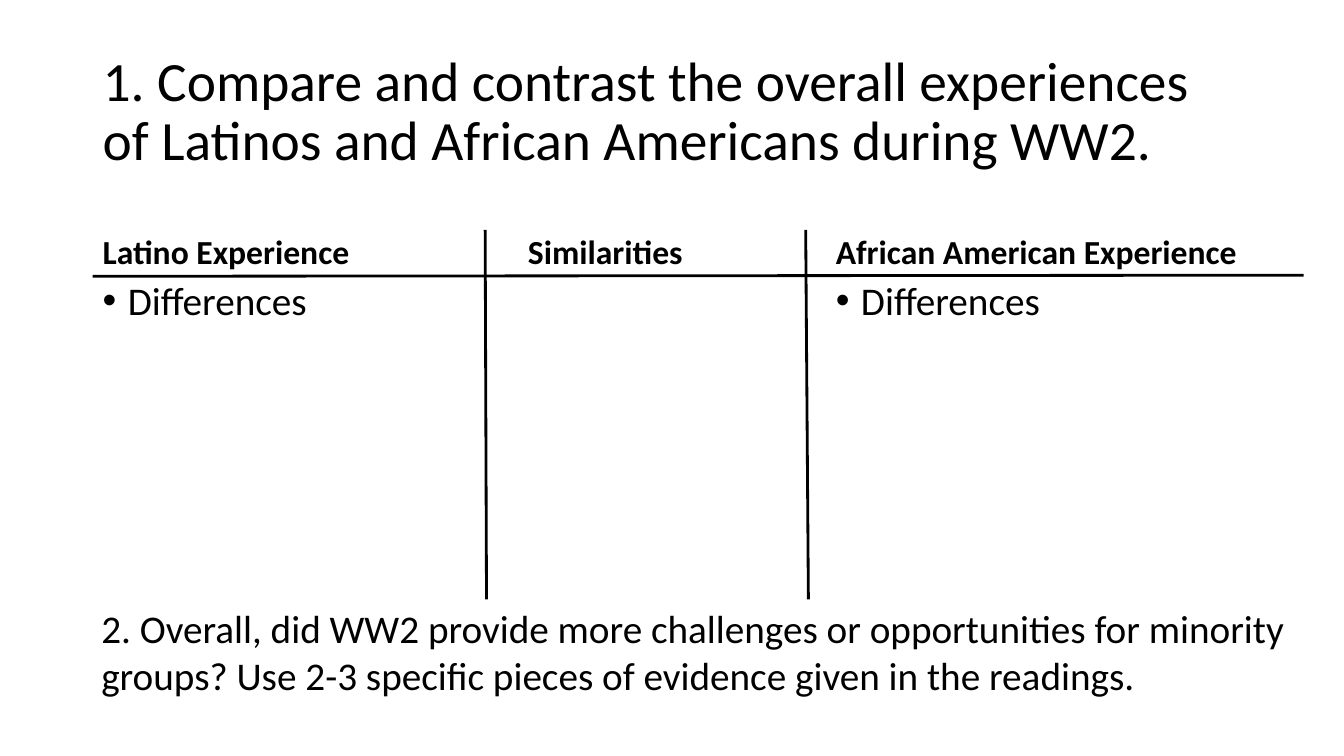
import dataclasses

import lxml.etree
import pptx
import pptx.dml.color
import pptx.enum.shapes
import pptx.enum.text
import pptx.oxml.ns
import pptx.slide
import pptx.util

WIDE, HIGH = 13.33, 7.5
FONT = "Calibri"
INK = {"text": "000000", "rule": "000000", "back": "FFFFFF"}
ANCHOR = pptx.enum.text.MSO_ANCHOR


@dataclasses.dataclass
class Box:
    """Text box, with its place in percent of the slide."""
    text: str
    left: float
    top: float
    width: float
    height: float
    size: float
    anchor: ANCHOR = ANCHOR.TOP
    bold: bool = False
    bullet: bool = False
    space: float = 0.9
    before: float = 0
    grow: bool = False


@dataclasses.dataclass
class Rule:
    """Straight line, with its ends in percent of the slide."""
    x1: float
    y1: float
    x2: float
    y2: float


def across(share: float) -> int:
    return pptx.util.Inches(WIDE * share / 100)


def down(share: float) -> int:
    return pptx.util.Inches(HIGH * share / 100)


def color(name: str) -> pptx.dml.color.RGBColor:
    return pptx.dml.color.RGBColor.from_string(INK[name])


def add_box(slide: pptx.slide.Slide, box: Box) -> None:
    shape = slide.shapes.add_textbox(across(box.left), down(box.top),
                                     across(box.width), down(box.height))
    frame = shape.text_frame
    frame.word_wrap = True
    frame.vertical_anchor = box.anchor
    if box.grow:
        frame.auto_size = pptx.enum.text.MSO_AUTO_SIZE.SHAPE_TO_FIT_TEXT
    frame.text = box.text
    para = frame.paragraphs[0]
    para.line_spacing = box.space
    para.space_before = pptx.util.Pt(box.before)
    font = para.runs[0].font
    font.name = FONT
    font.size = pptx.util.Pt(box.size)
    font.bold = box.bold
    font.color.rgb = color("text")
    if box.bullet:
        props = para._p.get_or_add_pPr()
        indent = pptx.util.Inches(0.25)
        props.set("marL", str(indent))
        props.set("indent", str(-indent))
        qn = pptx.oxml.ns.qn
        lxml.etree.SubElement(props, qn("a:buFont")).set("typeface", "Arial")
        lxml.etree.SubElement(props, qn("a:buChar")).set("char", "•")


def add_rule(slide: pptx.slide.Slide, rule: Rule) -> None:
    line = slide.shapes.add_connector(
        pptx.enum.shapes.MSO_CONNECTOR.STRAIGHT,
        across(rule.x1), down(rule.y1), across(rule.x2), down(rule.y2))
    line.line.color.rgb = color("rule")
    line.line.width = pptx.util.Pt(2)
    props = line._element.spPr
    lxml.etree.SubElement(props, pptx.oxml.ns.qn("a:effectLst"))


# Shared grid of the chart, in percent
EDGE, MID, LAST = 6.9, 38.55, 61.45
HEAD, BODY, FOOT = 24.55, 36.55, 79.3
BROAD, SLIM = 42.3, 31.75


def header(text: str, left: float, width: float) -> Box:
    return Box(text, left, HEAD, width, BODY - HEAD, 24,
               ANCHOR.BOTTOM, bold=True, before=10)


def point(text: str, left: float, width: float) -> Box:
    return Box(text, left, BODY, width, 53.7, 28, bullet=True, before=10)


BOXES = [
    Box("1. Compare and contrast the overall experiences of Latinos and "
        "African Americans during WW2.",
        EDGE, 5.3, 86.25, 19.3, 39.6, ANCHOR.MIDDLE),
    header("Latino Experience", EDGE, BROAD),
    header("Similarities", MID, SLIM),
    header("African American Experience", LAST, SLIM),
    point("Differences", EDGE, BROAD),
    point("Differences", LAST, SLIM),
    Box("2. Overall, did WW2 provide more challenges or opportunities for "
        "minority groups? Use 2-3 specific pieces of evidence given in the "
        "readings.",
        6.8, FOOT, 90.2, 13.9, 28, space=1, grow=True),
]

RULES = [
    Rule(EDGE, BODY, 97, 36.4),
    Rule(36.1, 30.4, 36.2, FOOT),
    Rule(59.95, 30.4, 60.15, FOOT),
]


def main() -> None:
    deck = pptx.Presentation()
    deck.slide_width = across(100)
    deck.slide_height = down(100)
    slide = deck.slides.add_slide(deck.slide_layouts[6])
    fill = slide.background.fill
    fill.solid()
    fill.fore_color.rgb = color("back")

    # Questions, column heads and points
    for box in BOXES:
        add_box(slide, box)

    # Lines of the chart
    for rule in RULES:
        add_rule(slide, rule)

    deck.save("out.pptx")


if __name__ == "__main__":
    main()
